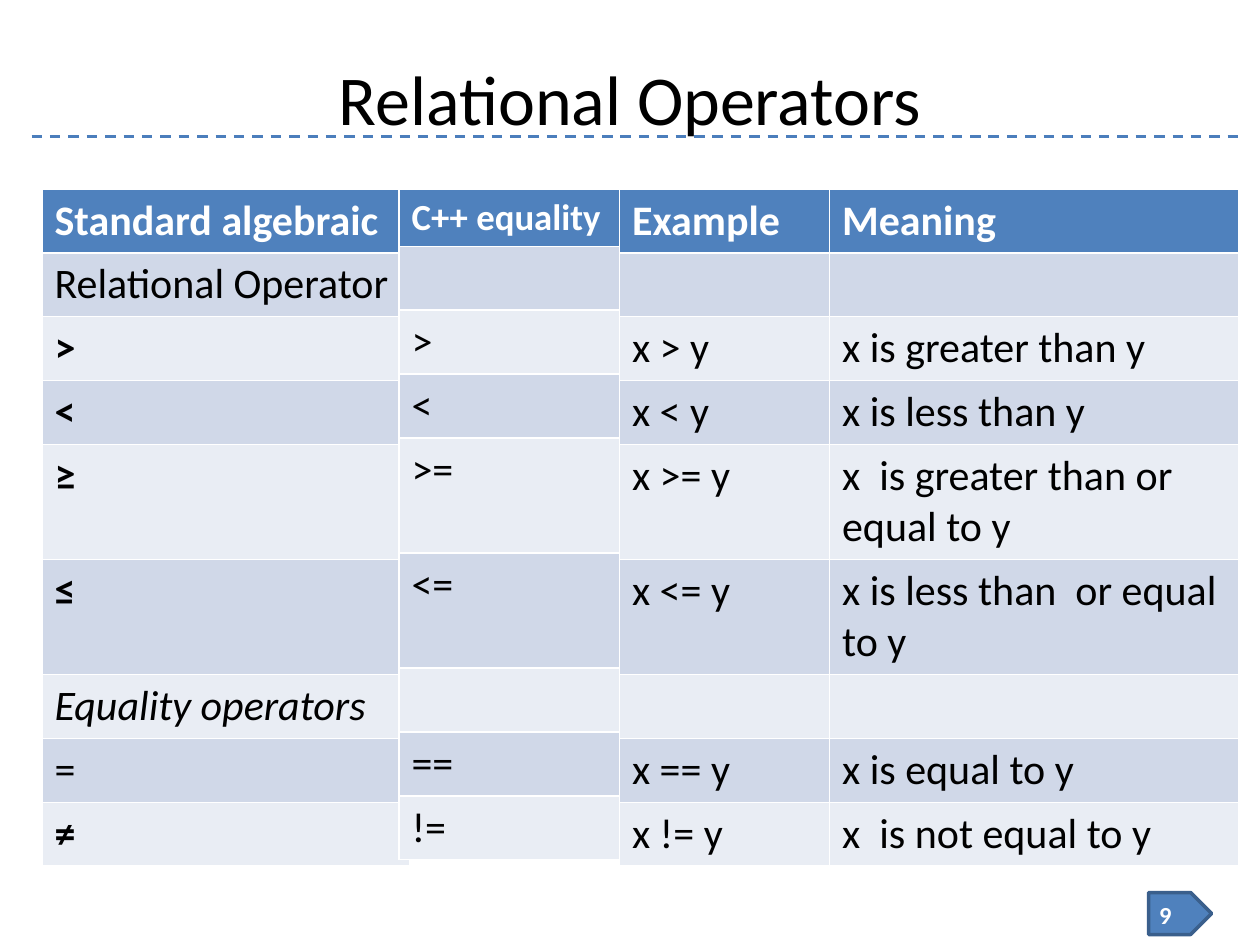
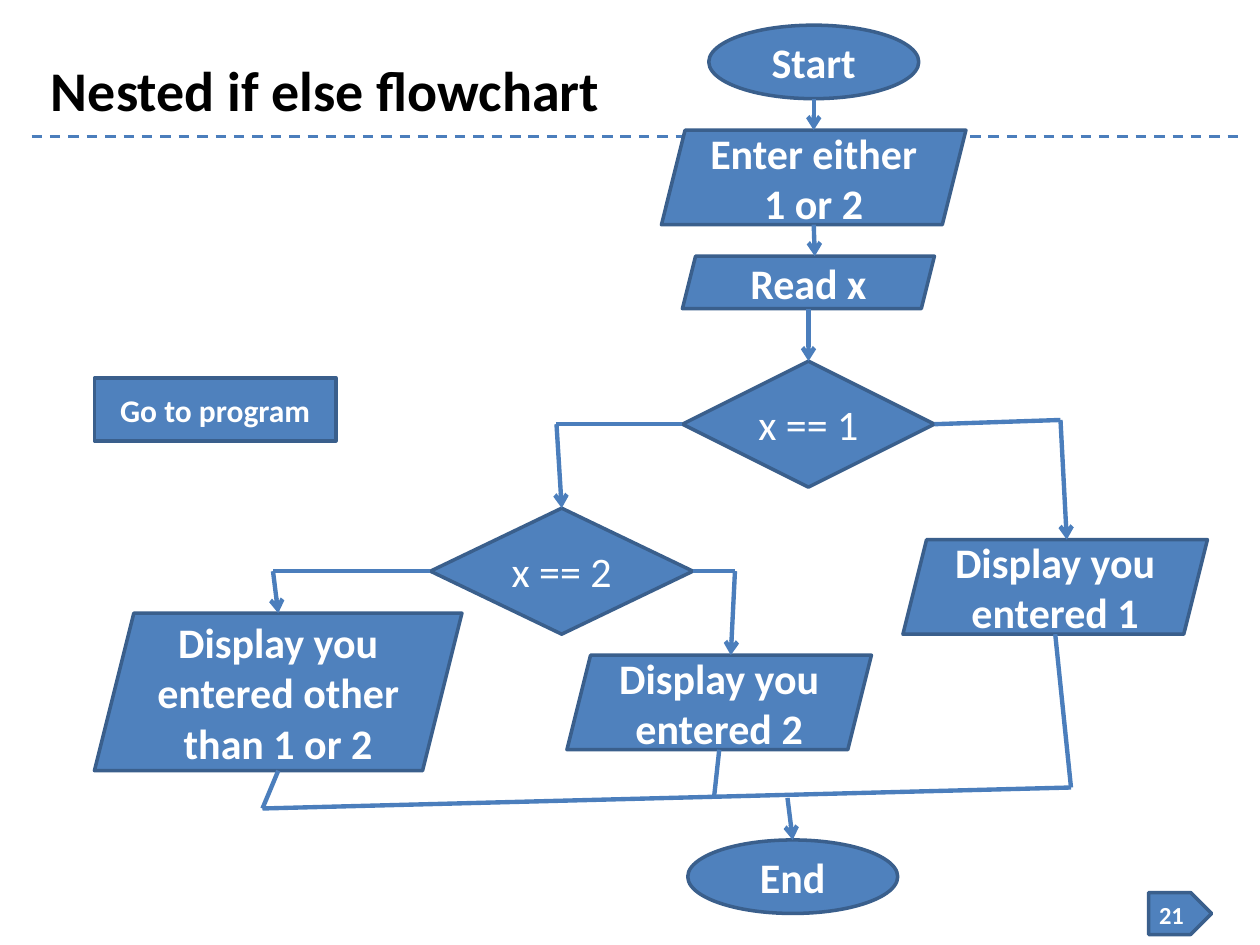
from dataclasses import dataclass
from itertools import pairwise

from lxml import etree
from pptx import Presentation
from pptx.dml.color import RGBColor
from pptx.enum.dml import MSO_LINE
from pptx.enum.shapes import MSO_CONNECTOR, MSO_SHAPE
from pptx.enum.text import MSO_ANCHOR, PP_ALIGN
from pptx.oxml.ns import qn
from pptx.util import Inches, Pt

STRAIGHT = MSO_CONNECTOR.STRAIGHT
OVAL, DIAMOND = MSO_SHAPE.OVAL, MSO_SHAPE.DIAMOND
INPUT, BUTTON, TAG = MSO_SHAPE.PARALLELOGRAM, MSO_SHAPE.RECTANGLE, MSO_SHAPE.PENTAGON
LEFT, CENTER = PP_ALIGN.LEFT, PP_ALIGN.CENTER
MIDDLE = MSO_ANCHOR.MIDDLE
DASH = MSO_LINE.DASH


@dataclass(frozen=True)
class Theme:
    font: str = "Calibri"
    blue: str = "4F81BD"
    edge: str = "3A5F8C"
    line: str = "4B7EBC"
    bands: tuple = ("E9EDF4", "D0D8E8")
    ink: str = "000000"
    paper: str = "FFFFFF"
    title: int = 40
    subtitle: int = 32
    body: int = 24
    tight: int = 21
    button: int = 18
    number: int = 14


T = Theme()

# The slide is a grid of 120 columns by 90 rows, 12 cells to the inch.
COLS, ROWS, CELL = 120, 90, Inches(1) // 12
PAGE = (0, 0, COLS, ROWS)


def grid(*values):
    return [round(v * CELL) for v in values]


def within(area, box):
    """Box given relative to an area, as slide lengths."""
    x, y, w, h = box
    return grid(area[0] + x, area[1] + y, w, h)


def write(tf, text, align=LEFT, **fmt):
    p = tf.paragraphs[0]
    p.alignment = align
    r = p.add_run()
    r.text = text
    style = {"size": T.body, "bold": False, "italic": False, "color": T.paper} | fmt
    r.font.color.rgb = RGBColor.from_string(style.pop("color"))
    style |= {"name": T.font, "size": Pt(style["size"])}
    for key, value in style.items():
        setattr(r.font, key, value)


def add_text(s, box, text, **fmt):
    tf = s.shapes.add_textbox(*grid(*box)).text_frame
    tf.word_wrap = True
    tf.vertical_anchor = MIDDLE
    write(tf, text, **fmt)


def add_block(s, kind, place, text="", **fmt):
    sp = s.shapes.add_shape(kind, *place)
    sp.shadow.inherit = False
    sp.fill.solid()
    sp.fill.fore_color.rgb = RGBColor.from_string(T.blue)
    sp.line.color.rgb = RGBColor.from_string(T.edge)
    sp.line.width = Pt(2)
    if text:
        tf = sp.text_frame
        tf.word_wrap = True
        tf.vertical_anchor = MIDDLE
        write(tf, text, align=CENTER, **fmt)


def add_line(s, start, end, width=2.5, dash=None, arrow=False):
    cx = s.shapes.add_connector(STRAIGHT, *grid(*start, *end))
    cx.line.color.rgb = RGBColor.from_string(T.line)
    cx.line.width = Pt(width)
    if dash:
        cx.line.dash_style = dash
    if arrow:
        etree.SubElement(cx.line._get_or_add_ln(), qn("a:tailEnd"), type="arrow")
    etree.SubElement(cx._element.spPr, qn("a:effectLst"))


def new_slide(prs, number, title, title_box, **fmt):
    s = prs.slides.add_slide(prs.slide_layouts[6])
    add_line(s, (3, 13), (118, 13), width=1.5, dash=DASH)
    add_block(s, TAG, grid(109.4, 85, 6, 4))
    add_text(s, (109.2, 85.1, 8, 4), str(number), size=T.number, bold=True)
    add_text(s, title_box, title, align=CENTER, color=T.ink, **fmt)
    return s


# Operator tables: left column, width, heading size, cells from the heading down
OPERATOR_COLUMNS = [
    (4, 35, T.body, ["Standard algebraic", "Relational Operator", ">", "<", "≥", "≤",
                     "Equality operators", "=", "≠"]),
    (38, 21, T.tight, ["C++ equality", "", ">", "<", ">=", "<=", "", "==", "!="]),
    (59, 20, T.body, ["Example", "", "x > y", "x < y", "x >= y", "x <= y", "",
                      "x == y", "x != y"]),
    (79, 39, T.body, ["Meaning", "", "x is greater than y", "x is less than y",
                      "x  is greater than or equal to y",
                      "x is less than  or equal to y", "",
                      "x is equal to y", "x  is not equal to y"]),
]
BOLD_SYMBOLS = set("><≥≤≠")
TWO_LINE_ROWS = (4, 5)
ONE_LINE, TWO_LINES = Pt(36.5), Pt(65.8)


def operator_table(s, area, column, first):
    x, width, heading_size, texts = column
    place = within(area, (x, 0, width, area[3]))
    table = s.shapes.add_table(len(texts), 1, *place).table
    for i, text in enumerate(texts):
        table.rows[i].height = TWO_LINES if i in TWO_LINE_ROWS else ONE_LINE
        cell = table.cell(i, 0)
        cell.fill.solid()
        cell.fill.fore_color.rgb = RGBColor.from_string(T.bands[i % 2] if i else T.blue)
        if i == 0:
            write(cell.text_frame, text, size=heading_size, bold=True)
        elif text:
            write(cell.text_frame, text, color=T.ink,
                  bold=first and text in BOLD_SYMBOLS,
                  italic=text == "Equality operators")
    table.rows[0].height = Pt(heading_size * 1.22 + 7.2)


def operators_slide(prs):
    s = new_slide(prs, 9, "Relational Operators", (6, 4.6, 108, 9.4), size=T.title)
    for i, column in enumerate(OPERATOR_COLUMNS):
        operator_table(s, (0, 18, COLS, 64), column, first=i == 0)


STEPS = {
    "start": (OVAL, (67.5, 2.4, 20, 7), "Start"),
    "enter": (INPUT, (63, 12.4, 29, 9), "Enter either 1 or 2"),
    "read": (INPUT, (65, 24.4, 24, 5), "Read x"),
    "is 1": (DIAMOND, (65, 34.4, 24, 12), "x == 1"),
    "show 1": (INPUT, (86, 51.4, 29, 9), "Display you entered 1"),
    "is 2": (DIAMOND, (41, 48.4, 25, 12), "x == 2"),
    "show 2": (INPUT, (54, 62.4, 29, 9), "Display you entered 2"),
    "show other": (INPUT, (9, 58.4, 35, 15), "Display you entered other than 1 or 2"),
    "end": (OVAL, (65.5, 80, 20, 7), "End"),
}


def port(step, side, shift=0):
    """Middle of one side of a step, moved sideways by shift."""
    x, y, w, h = STEPS[step][1]
    fx, fy = {"top": (0.5, 0), "bottom": (0.5, 1), "left": (0, 0.5), "right": (1, 0.5)}[side]
    return x + w * fx + shift, y + h * fy


MERGE_LEFT, MERGE_RIGHT = (25, 77), (102, 75)
ARROWS = [
    [port("start", "bottom"), port("enter", "top")],
    [port("enter", "bottom"), port("read", "top", 0.6)],
    [port("read", "bottom"), port("is 1", "top")],
    [port("is 1", "right"), (101, 40), port("show 1", "top", 1.1)],
    [port("is 1", "left"), (53, 40.4), port("is 2", "top")],
    [port("is 2", "right"), (70, 54.4), port("show 2", "top", 1.1)],
    [port("is 2", "left"), (26, 54.4), port("show other", "top")],
    [(75, 76), port("end", "top")],
]
JOINS = [
    [port("show other", "bottom"), MERGE_LEFT, MERGE_RIGHT, port("show 1", "bottom")],
    [port("show 2", "bottom"), (68, 76)],
]


def flowchart(s, area):
    for kind, box, text in STEPS.values():
        add_block(s, kind, within(area, box), text, bold=kind != DIAMOND)
    for routes, pointed in ((ARROWS, True), (JOINS, False)):
        for route in routes:
            points = [(area[0] + x, area[1] + y) for x, y in route]
            for start, end in pairwise(points):
                add_line(s, start, end, arrow=pointed and end == points[-1])


def flowchart_slide(prs):
    s = new_slide(prs, 21, "Nested if else flowchart", (3, 3, 56, 11),
                  size=T.subtitle, bold=True)
    flowchart(s, PAGE)
    add_block(s, BUTTON, grid(9, 36, 23, 6), "Go to program", size=T.button, bold=True)


def main():
    prs = Presentation()
    prs.slide_width, prs.slide_height = grid(COLS, ROWS)
    operators_slide(prs)
    flowchart_slide(prs)
    prs.save("out.pptx")


if __name__ == "__main__":
    main()
